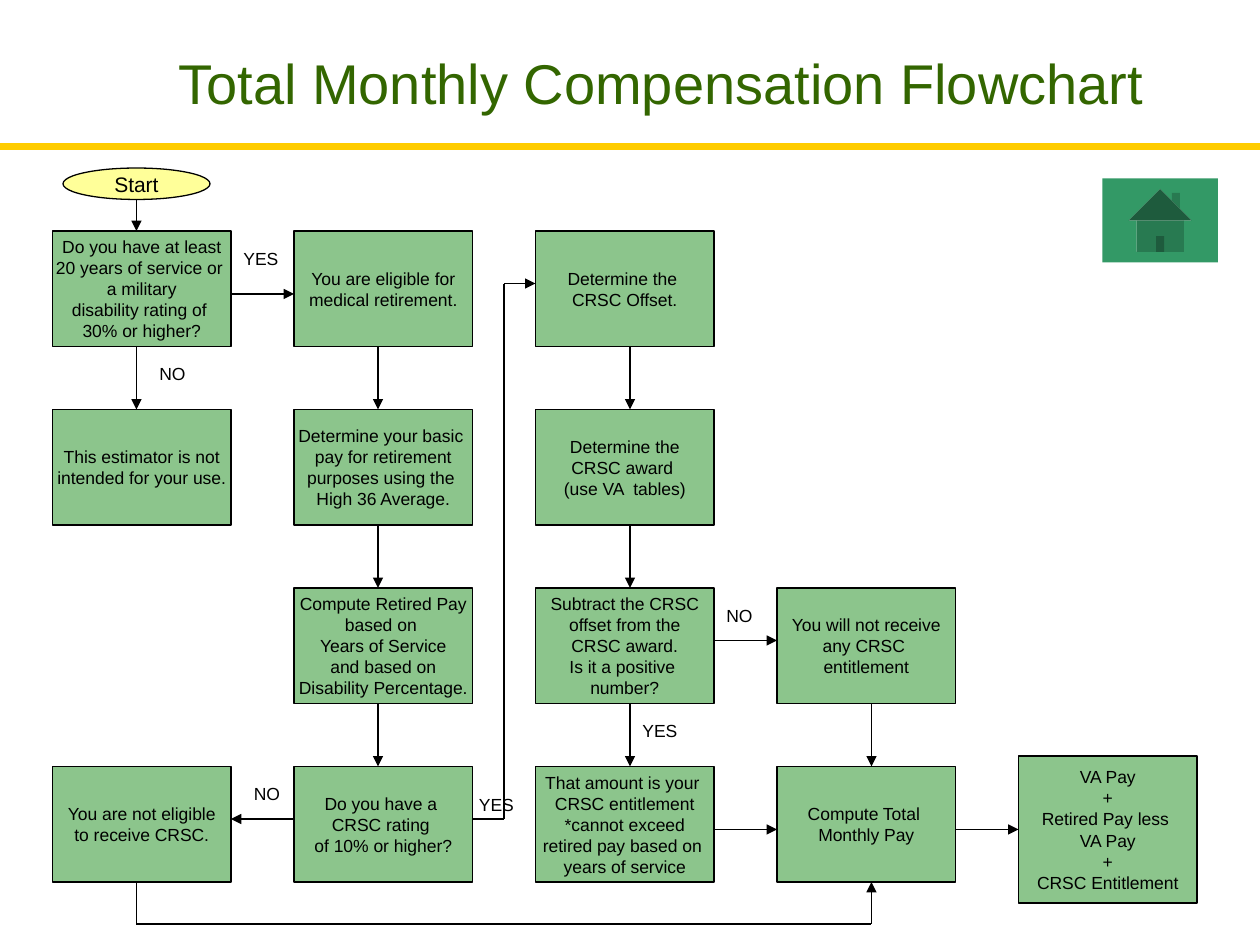
import itertools

import lxml.etree
import pptx
import pptx.dml.color
import pptx.enum.shapes
import pptx.enum.text
import pptx.oxml.ns
import pptx.util

Pt = pptx.util.Pt
SHAPE = pptx.enum.shapes.MSO_SHAPE
ALIGN = pptx.enum.text.PP_ALIGN
ANCHOR = pptx.enum.text.MSO_ANCHOR
AUTO = pptx.enum.text.MSO_AUTO_SIZE

THEME = {
    "font": "Arial",
    "ink": "000000", "title": "336600", "rule": "FFCC00",
    "step": "008000", "start": "FFFF99", "home": "339966",
    "step_opacity": 45,
    "body_size": 10, "start_size": 12, "title_size": 32,
    "line": 0.75, "rule_line": 4,
}

TITLE = "Total Monthly Compensation Flowchart"

LEFT, TOP = 30, 132
STEP_WIDTH, STEP_HEIGHT = 102, 66
COLUMN_PITCH, ROW_PITCH = 138, 102
RESULT_HEIGHT = 84

STEPS = {
    (0, 0): ["Do you have at least", "20 years of service or ", "a military",
             "disability rating of ", "30% or higher?"],
    (1, 0): ["You are eligible for", "medical retirement."],
    (2, 0): ["Determine the ", "CRSC Offset."],
    (0, 1): ["This estimator is not", "intended for your use."],
    (1, 1): ["Determine your basic ", "pay for retirement",
             "purposes using the ", "High 36 Average."],
    (2, 1): ["Determine the", "CRSC award ", "(use VA  tables)"],
    (1, 2): ["Compute Retired Pay", "based on ", "Years of Service",
             "and based on", "Disability Percentage."],
    (2, 2): ["Subtract the CRSC", "offset from the", "CRSC award.",
             "Is it a positive ", "number?"],
    (3, 2): ["You will not receive", "any CRSC ", "entitlement"],
    (0, 3): ["You are not eligible", "to receive CRSC."],
    (1, 3): ["Do you have a ", "CRSC rating ", "of 10% or higher?"],
    (2, 3): ["That amount is your ", "CRSC entitlement", "*cannot exceed",
             "retired pay based on ", "years of service"],
    (3, 3): ["Compute Total ", "Monthly Pay"],
}
RESULT = ["VA Pay", "+", "Retired Pay less ", "VA Pay", "+", "CRSC Entitlement"]

ANSWERS = [
    ("YES", 132, 138), ("NO", 84, 204), (" YES", 264, 450), ("NO", 138, 444),
    ("YES", 360, 408), ("NO", 408, 342),
]

DOWN_X = [78, 216, 360, 498]
DOWN_LINKS = [(0, 0), (1, 0), (1, 1), (1, 2), (2, 0), (2, 1), (2, 2), (3, 2)]
ACROSS_LINKS = [(0, 0, 168), (2, 2, 366), (2, 3, 474)]


def corner(column, row):
    return LEFT + column * COLUMN_PITCH, TOP + row * ROW_PITCH


def routes():
    yield [(DOWN_X[0], 114), (DOWN_X[0], TOP)]
    for column, row in DOWN_LINKS:
        top = corner(column, row)[1]
        yield [(DOWN_X[column], top + STEP_HEIGHT), (DOWN_X[column], top + ROW_PITCH)]
    for column, row, y in ACROSS_LINKS:
        left = corner(column, row)[0]
        yield [(left + STEP_WIDTH, y), (left + COLUMN_PITCH, y)]
    rating_left, bottom_row = corner(1, 3)
    rating_right = rating_left + STEP_WIDTH
    offset_left = corner(2, 0)[0]
    yield [(rating_left, 468), (LEFT + STEP_WIDTH, 468)]
    yield [(rating_right, 468), (288, 468), (288, 162), (offset_left, 162)]
    bottom = bottom_row + STEP_HEIGHT
    yield [(DOWN_X[0], bottom), (DOWN_X[0], 528), (DOWN_X[3], 528), (DOWN_X[3], bottom)]


def colour(name):
    return pptx.dml.color.RGBColor.from_string(THEME[name])


def apply(target, values):
    for name, value in values.items():
        setattr(target, name, value)


def write(box, lines, size, ink="ink", align=ALIGN.CENTER, **frame_format):
    frame = box.text_frame
    apply(frame, frame_format)
    for index, line in enumerate(lines):
        para = frame.add_paragraph() if index else frame.paragraphs[0]
        para.alignment = align
        span = para.add_run()
        span.text = line
        apply(span.font, {"name": THEME["font"], "size": Pt(THEME[size])})
        span.font.color.rgb = colour(ink)


def add_text(page, text, area, size, **text_format):
    box = page.shapes.add_textbox(*map(Pt, area))
    write(box, [text], size, word_wrap=True,
          auto_size=AUTO.SHAPE_TO_FIT_TEXT, **text_format)


def add_box(page, kind, area, fill, outlined=True):
    box = page.shapes.add_shape(kind, *map(Pt, area))
    box.shadow.inherit = False
    box.fill.solid()
    box.fill.fore_color.rgb = colour(fill)
    if outlined:
        box.line.color.rgb = colour("ink")
        box.line.width = Pt(THEME["line"])
    else:
        box.line.fill.background()
    return box


def add_step(page, lines, area):
    box = add_box(page, SHAPE.RECTANGLE, area, "step")
    tone = box.fill._xPr.find(".//" + pptx.oxml.ns.qn("a:srgbClr"))
    alpha = lxml.etree.SubElement(tone, pptx.oxml.ns.qn("a:alpha"))
    alpha.set("val", str(THEME["step_opacity"] * 1000))
    write(box, lines, "body_size", word_wrap=False, vertical_anchor=ANCHOR.MIDDLE)
    return box


def add_line(page, start, end, arrow=False, ink="ink", width="line"):
    straight = pptx.enum.shapes.MSO_CONNECTOR.STRAIGHT
    link = page.shapes.add_connector(straight, *map(Pt, start + end))
    link.line.color.rgb = colour(ink)
    link.line.width = Pt(THEME[width])
    if arrow:
        tail = lxml.etree.SubElement(link.line._get_or_add_ln(), pptx.oxml.ns.qn("a:tailEnd"))
        tail.set("type", "triangle")
    lxml.etree.SubElement(link._element.spPr, pptx.oxml.ns.qn("a:effectLst"))
    return link


def main():
    deck = pptx.Presentation()
    apply(deck, {"slide_width": Pt(720), "slide_height": Pt(540)})
    page = deck.slides.add_slide(deck.slide_layouts[6])

    add_text(page, TITLE, (72, 24, 612, 45.5), "title_size", ink="title")
    add_line(page, (0, 84), (720, 84), ink="rule", width="rule_line")

    start = add_box(page, SHAPE.OVAL, (36, 96, 84, 18), "start")
    write(start, ["Start"], "start_size", word_wrap=False, vertical_anchor=ANCHOR.MIDDLE)
    add_box(page, SHAPE.ACTION_BUTTON_HOME, (630, 102, 83 - 17, 48), "home", outlined=False)

    for place, lines in STEPS.items():
        add_step(page, lines, (*corner(*place), STEP_WIDTH, STEP_HEIGHT))
    result_left = corner(4, 3)[0]
    result = add_step(page, RESULT, (result_left, 432, STEP_WIDTH, RESULT_HEIGHT))

    for route in routes():
        for begin, end in itertools.pairwise(route):
            add_line(page, begin, end, arrow=end == route[-1])
    total_right = corner(3, 3)[0] + STEP_WIDTH
    add_line(page, (total_right, 474), (result_left, 474), arrow=True).end_connect(result, 1)

    for text, left, top in ANSWERS:
        add_text(page, text, (left, top, 48, 19.5), "body_size", align=ALIGN.LEFT)

    deck.save("out.pptx")


if __name__ == "__main__":
    main()
